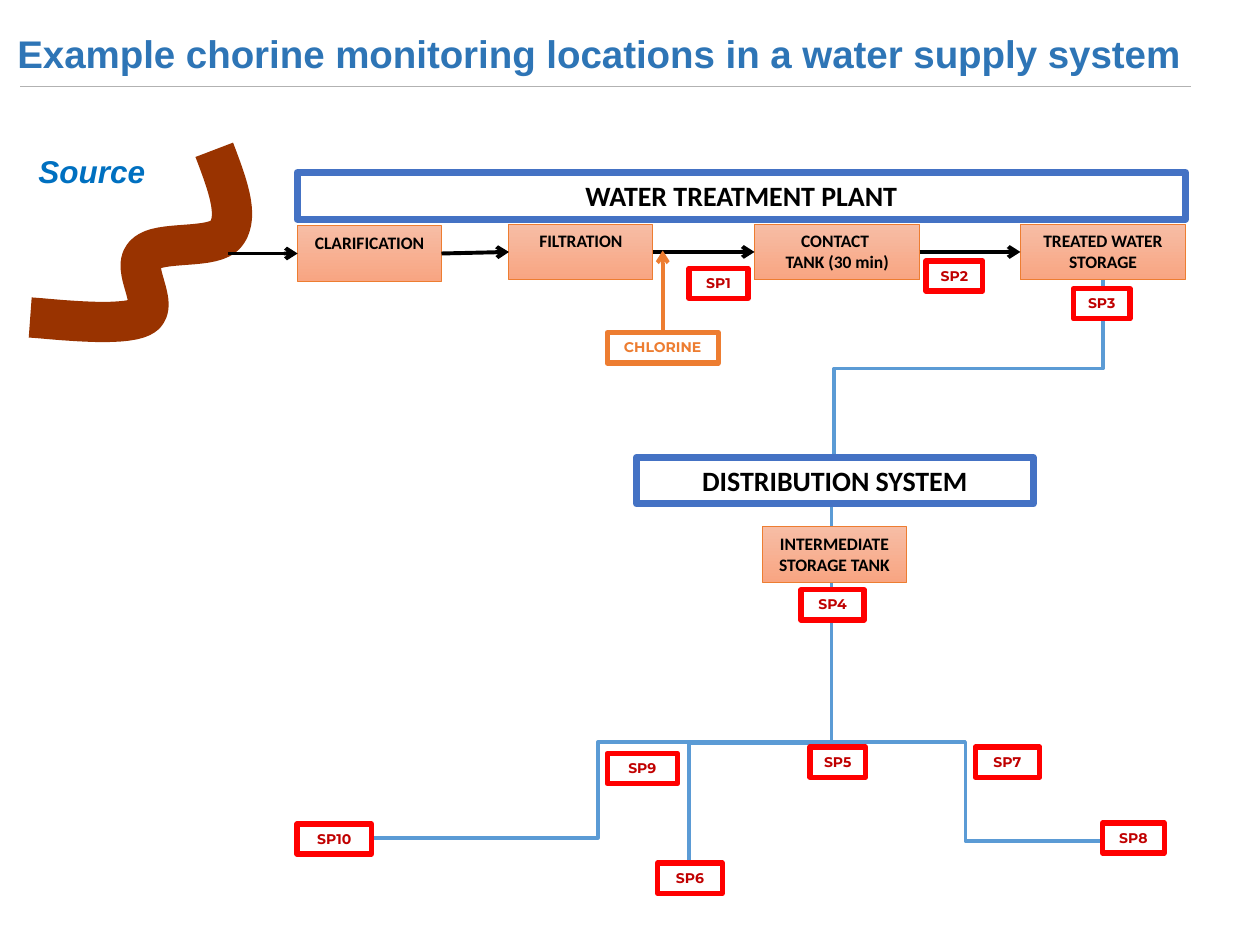
import pptx
import pptx.dml.color
import pptx.enum.shapes
import pptx.enum.text
import pptx.oxml
import pptx.oxml.ns
import pptx.util

Cm, Pt = pptx.util.Cm, pptx.util.Pt
RGB = pptx.dml.color.RGBColor.from_string
ANCHOR = pptx.enum.text.MSO_ANCHOR
ALIGN = pptx.enum.text.PP_ALIGN
CONNECTOR = pptx.enum.shapes.MSO_CONNECTOR
RECTANGLE = pptx.enum.shapes.MSO_SHAPE.RECTANGLE
NAMESPACE = pptx.oxml.ns.nsdecls("a")

COLORS = {
    "title": "2E75B6", "source": "0070C0", "black": "000000", "white": "FFFFFF",
    "heading": "4472C4", "orange": "ED7D31", "pipe": "5B9BD5", "river": "993300",
    "point": "FF0000", "point_text": "C00000", "rule": "B2B2B2",
    "tank_top": "F7BDA5", "tank_bottom": "F8A582",
}

presentation = pptx.Presentation()
presentation.slide_width, presentation.slide_height = Cm(25.4), Cm(19.05)
slide = presentation.slides.add_slide(presentation.slide_layouts[6])
shapes = slide.shapes


def write_text(shape, text, font, size, color, align=ALIGN.CENTER, anchor=ANCHOR.TOP, italic=None):
    frame = shape.text_frame
    frame.text = text
    frame.word_wrap = True
    frame.vertical_anchor = anchor
    for paragraph in frame.paragraphs:
        paragraph.alignment = align
        for run in paragraph.runs:
            run.font.name, run.font.size = font, Pt(size)
            run.font.bold, run.font.italic = True, italic
            run.font.color.rgb = RGB(COLORS[color])


def add_line(start, end, color, width, kind=CONNECTOR.STRAIGHT, arrow=False):
    connector = shapes.add_connector(kind, Cm(start[0]), Cm(start[1]), Cm(end[0]), Cm(end[1]))
    connector.line.color.rgb = RGB(COLORS[color])
    connector.line.width = Pt(width)
    properties = connector._element.spPr
    if arrow:
        properties.find(pptx.oxml.ns.qn("a:ln")).append(
            pptx.oxml.parse_xml(f'<a:tailEnd {NAMESPACE} type="arrow"/>'))
    properties.append(pptx.oxml.parse_xml(f"<a:effectLst {NAMESPACE}/>"))
    return connector


# Title and source label
title = shapes.add_textbox(Cm(0.1), Cm(-0.03), Cm(25.65), Cm(2.21))
write_text(title, "Example chorine monitoring locations in a water supply system",
           "Arial", 22, "title", align=ALIGN.LEFT, anchor=ANCHOR.MIDDLE)
add_line((0.41, 1.75), (24, 1.75), "rule", 0.75)
source_label = shapes.add_textbox(Cm(-0.69), Cm(2.95), Cm(5.08), Cm(1.02))
write_text(source_label, "Source", "Arial", 18, "source", italic=True)

# River: cubic curves, each continuing from the end of the one before
river_start = (4.32, 3.02)
river_curves = [
    ((4.57, 3.68), (4.83, 4.34), (4.57, 4.7)),
    ((4.34, 5.05), (3.2, 4.83), (2.92, 5.13)),
    ((2.62, 5.41), (3.25, 6.17), (2.87, 6.38)),
    ((2.46, 6.6), (1.07, 6.43), (0.61, 6.4)),
]
STEPS = 16
river_points = []
curve_start = river_start
for control_1, control_2, curve_end in river_curves:
    for step in range(1, STEPS + 1):
        t = step / STEPS
        weights = ((1 - t) ** 3, 3 * t * (1 - t) ** 2, 3 * t ** 2 * (1 - t), t ** 3)
        corners = (curve_start, control_1, control_2, curve_end)
        river_points.append(tuple(
            Cm(sum(weight * corner[axis] for weight, corner in zip(weights, corners)))
            for axis in (0, 1)))
    curve_start = curve_end
builder = shapes.build_freeform(Cm(river_start[0]), Cm(river_start[1]))
builder.add_line_segments(river_points, close=False)
river = builder.convert_to_shape()
river.shadow.inherit = False
river.fill.background()
river.line.color.rgb = RGB(COLORS["river"])
river.line.width = Pt(23)

# Pipes: start, end, bend position, whether the pipe leaves downwards
pipes = [
    ((16.69, 14.96), (7.42, 16.89), 0.5, False),
    ((16.76, 9.78), (13.89, 17.4), 0.683, True),
    ((16.69, 14.96), (22.23, 16.95), 0.5, False),
    ((22.23, 5.64), (16.81, 9.22), 0.5, True),
]
# Box styles: line colour, line width, font, size, text colour, height
styles = {
    "heading": ("heading", 4, "Calibri", 16, "black", 0.94),
    "tank": ("orange", 0.5, "Calibri", 10, "black", 1.12),
    "dose": ("orange", 3, "Montserrat", 8, "orange", 0.61),
    "point": ("point", 3, "Montserrat", 8, "point_text", 0.61),
}
# Boxes: style, text, left, top, width
boxes = [
    ("heading", "WATER TREATMENT PLANT", 5.99, 3.48, 17.91),
    ("heading", "DISTRIBUTION SYSTEM", 12.83, 9.22, 8),
    ("tank", "CLARIFICATION", 6, 4.55, 2.9),
    ("tank", "FILTRATION", 10.26, 4.52, 2.9),
    ("tank", "CONTACT \nTANK (30 min)", 15.21, 4.52, 3.33),
    ("tank", "TREATED WATER STORAGE", 20.57, 4.52, 3.33),
    ("tank", "INTERMEDIATE STORAGE TANK", 15.37, 10.62, 2.9),
    ("dose", "CHLORINE", 12.24, 6.71, 2.24),
    ("point", "SP1", 13.89, 5.41, 1.19),
    ("point", "SP2", 18.67, 5.26, 1.14),
    ("point", "SP3", 21.64, 5.82, 1.14),
    ("point", "SP4", 16.15, 11.89, 1.27),
    ("point", "SP5", 16.33, 15.06, 1.12),
    ("point", "SP6", 13.26, 17.4, 1.3),
    ("point", "SP7", 19.66, 15.06, 1.3),
    ("point", "SP8", 22.23, 16.59, 1.24),
    ("point", "SP9", 12.24, 15.19, 1.42),
    ("point", "SP10", 5.99, 16.61, 1.5),
]

for start, end, bend, downwards in pipes:
    if downwards:
        # A quarter turn about the middle swaps the two extents
        middle_x, middle_y = (start[0] + end[0]) / 2, (start[1] + end[1]) / 2
        half_length, half_shift = (end[1] - start[1]) / 2, (start[0] - end[0]) / 2
        start = (middle_x - half_length, middle_y - half_shift)
        end = (middle_x + half_length, middle_y + half_shift)
    pipe = add_line(start, end, "pipe", 2, CONNECTOR.ELBOW)
    properties = pipe._element.spPr
    if downwards:
        properties.find(pptx.oxml.ns.qn("a:xfrm")).set("rot", "5400000")
    if bend != 0.5:
        guides = properties.find(pptx.oxml.ns.qn("a:prstGeom")).get_or_add_avLst()
        guides.append(pptx.oxml.parse_xml(
            f'<a:gd {NAMESPACE} name="adj1" fmla="val {round(bend * 100000)}"/>'))

box_by_text = {}
for style, text, left, top, width in boxes:
    line_color, line_width, font, size, text_color, height = styles[style]
    box = shapes.add_shape(RECTANGLE, Cm(left), Cm(top), Cm(width), Cm(height))
    box.shadow.inherit = False
    if style == "tank":
        box.fill.gradient()
        box.fill.gradient_angle = 270
        for stop, name in zip(box.fill.gradient_stops, ("tank_top", "tank_bottom")):
            stop.color.rgb = RGB(COLORS[name])
    else:
        box.fill.solid()
        box.fill.fore_color.rgb = RGB(COLORS["white"])
    box.line.color.rgb = RGB(COLORS[line_color])
    box.line.width = Pt(line_width)
    write_text(box, text, font, size, text_color)
    box_by_text[text] = box

# Flow through the plant
flow = [box_by_text[text] for style, text, *place in boxes if style == "tank"][:4]
add_line((4.6, 5.11), (6, 5.11), "black", 2.25, arrow=True).end_connect(flow[0], 1)
for tank, next_tank in zip(flow, flow[1:]):
    arrow = add_line((0, 0), (1, 1), "black", 2.25, arrow=True)
    arrow.begin_connect(tank, 3)
    arrow.end_connect(next_tank, 1)
dosing = add_line((13.36, 6.71), (13.36, 5.05), "orange", 2.25, arrow=True)
dosing.begin_connect(box_by_text["CHLORINE"], 0)

presentation.save("out.pptx")
